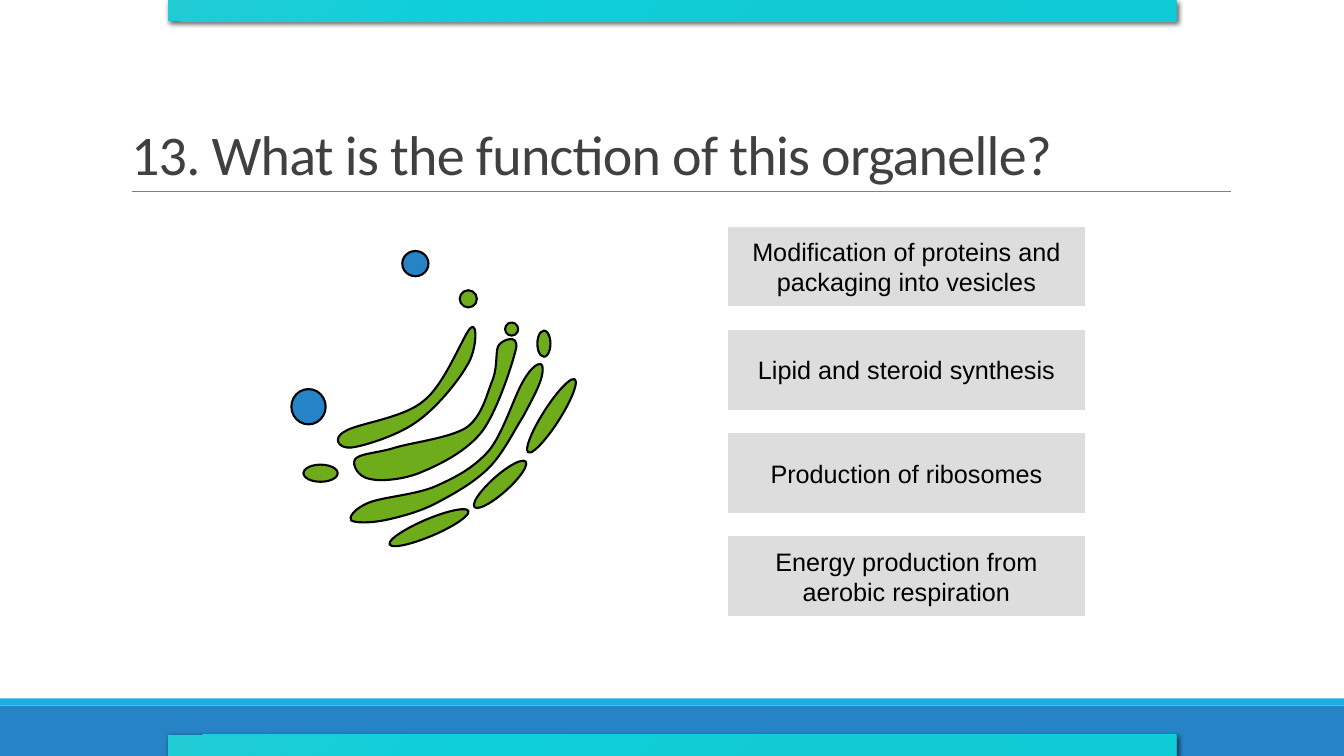
"""Build a quiz slide asking for the function of a drawn organelle."""
from lxml import etree
from pptx import Presentation
from pptx.dml.color import RGBColor
from pptx.enum.shapes import MSO_CONNECTOR, MSO_SHAPE
from pptx.enum.text import MSO_ANCHOR, MSO_AUTO_SIZE, PP_ALIGN
from pptx.oxml import parse_xml
from pptx.oxml.ns import nsdecls, qn
from pptx.util import Inches, Pt

TITLE = "13. What is the function of this organelle?"
ANSWERS = [
    "Modification of proteins and packaging into vesicles",
    "Lipid and steroid synthesis",
    "Production of ribosomes",
    "Energy production from aerobic respiration",
]

BLUE = RGBColor(0x26, 0x83, 0xC6)
SKY = RGBColor(0x1C, 0xAD, 0xE4)
GREEN = RGBColor(0x6E, 0xAC, 0x1C)
GREY = RGBColor(0xDD, 0xDD, 0xDD)
RULE = RGBColor(0x80, 0x80, 0x80)
DARK = RGBColor(0x40, 0x40, 0x40)
BLACK = RGBColor(0, 0, 0)
BAR_STOPS = [(0, "0ECBD5"), (34, "12CAD3"), (70, "0FD0DA"), (100, "20CBD4")]

CISTERNAE = [
    ((3.89, 4.45), [
        (3.71, 4.5, 3.56, 4.5, 3.52, 4.56), (3.49, 4.61, 3.55, 4.73, 3.66, 4.75),
        (3.77, 4.78, 4.01, 4.76, 4.19, 4.68), (4.38, 4.6, 4.64, 4.47, 4.79, 4.27),
        (4.94, 4.06, 5.09, 3.59, 5.12, 3.45), (5.14, 3.31, 4.99, 3.37, 4.95, 3.42),
        (4.91, 3.47, 4.94, 3.62, 4.89, 3.76), (4.83, 3.9, 4.79, 4.12, 4.63, 4.24),
        (4.46, 4.35, 4.07, 4.39, 3.89, 4.45)]),
    ((3.65, 4.99), [
        (3.79, 4.93, 4.13, 4.91, 4.33, 4.82), (4.53, 4.73, 4.7, 4.64, 4.85, 4.47),
        (4.99, 4.3, 5.1, 3.93, 5.19, 3.78), (5.27, 3.64, 5.33, 3.61, 5.36, 3.61),
        (5.39, 3.61, 5.39, 3.7, 5.36, 3.78), (5.33, 3.87, 5.27, 3.98, 5.19, 4.13),
        (5.1, 4.27, 4.99, 4.5, 4.85, 4.64), (4.7, 4.79, 4.5, 4.9, 4.33, 4.99),
        (4.16, 5.08, 3.96, 5.13, 3.82, 5.16), (3.68, 5.19, 3.51, 5.19, 3.48, 5.16),
        (3.46, 5.13, 3.51, 5.05, 3.65, 4.99)]),
    ((3.42, 4.28), [
        (3.54, 4.2, 4.01, 4.15, 4.21, 3.97), (4.42, 3.8, 4.6, 3.31, 4.67, 3.25),
        (4.74, 3.19, 4.73, 3.48, 4.63, 3.63), (4.54, 3.79, 4.31, 4.07, 4.11, 4.2),
        (3.92, 4.33, 3.59, 4.43, 3.48, 4.44), (3.36, 4.45, 3.29, 4.35, 3.42, 4.28)]),
]
VESICLES = [
    (4.56, 2.88, 0.17, 0.17, 0, GREEN),
    (3.01, 4.61, 0.34, 0.17, 0, GREEN),
    (2.89, 3.86, 0.34, 0.35, 0, BLUE),
    (4.62, 4.72, 0.68, 0.17, 318.3, GREEN),
    (5.04, 4.04, 0.86, 0.17, 302.5, GREEN),
    (3.83, 5.15, 0.85, 0.17, 337, GREEN),
    (5.33, 3.28, 0.13, 0.26, 0, GREEN),
    (5.01, 3.2, 0.13, 0.13, 0, GREEN),
    (3.99, 2.49, 0.26, 0.25, 0, BLUE),
]

SLIDE_W, SLIDE_H = 13.33, 7.5
BAND_H, STRIPE_H = 0.5, 0.07
BAR_W, BAR_H = 10, 0.21
ANSWER_X, ANSWER_Y, ANSWER_W, ANSWER_H = 7.22, 2.25, 3.54, 0.79
ANSWER_PITCH = (5.32 - ANSWER_Y) / (len(ANSWERS) - 1)
UNITS = 100


def paint(sp, fill, outlined=False):
    sp.shadow.inherit = False
    sp.fill.solid()
    sp.fill.fore_color.rgb = fill
    if outlined:
        sp.line.color.rgb = BLACK
        sp.line.width = Pt(1.5)
    else:
        sp.line.fill.background()


def add_box(s, kind, x, y, w, h, fill, outlined=False):
    sp = s.shapes.add_shape(kind, Inches(x), Inches(y), Inches(w), Inches(h))
    paint(sp, fill, outlined)
    return sp


def add_cisterna(s, start, curves):
    knots = [tuple(round(v * UNITS) for v in pt)
             for pt in [start] + [curve[4:] for curve in curves]]
    left, top = (min(axis) for axis in zip(*knots))
    builder = s.shapes.build_freeform(*knots[0], scale=Inches(1) / UNITS)
    builder.add_line_segments(knots[1:], close=True)
    sp = builder.convert_to_shape()
    paint(sp, GREEN, outlined=True)
    segments = list(sp.element.spPr.iter(qn("a:lnTo")))
    for segment, curve in zip(segments, curves):
        bezier = etree.Element(qn("a:cubicBezTo"))
        for x, y in zip(curve[::2], curve[1::2]):
            etree.SubElement(bezier, qn("a:pt"), x=str(round(x * UNITS) - left),
                             y=str(round(y * UNITS) - top))
        segment.getparent().replace(segment, bezier)


def add_bar(s, y):
    sp = add_box(s, MSO_SHAPE.RECTANGLE, (SLIDE_W - BAR_W) / 2, y, BAR_W, BAR_H, SKY)
    stops = "".join(f'<a:gs pos="{pos * 1000}"><a:srgbClr val="{color}"/></a:gs>'
                    for pos, color in BAR_STOPS)
    spPr = sp.element.spPr
    spPr.replace(spPr.find(qn("a:solidFill")), parse_xml(
        f'<a:gradFill {nsdecls("a")}><a:gsLst>{stops}</a:gsLst><a:path path="circle">'
        '<a:fillToRect l="100000" t="100000"/></a:path></a:gradFill>'))
    spPr.find(qn("a:effectLst")).append(parse_xml(
        f'<a:outerShdw {nsdecls("a")} blurRad="{Pt(3.5)}" dist="{Pt(2)}" dir="2700000">'
        '<a:srgbClr val="000000"><a:alpha val="60000"/></a:srgbClr></a:outerShdw>'))


def add_title(s):
    title = s.shapes.title
    title.left, title.top = Inches(1.2), Inches(0.31)
    title.width, title.height = Inches(11), Inches(1.59)
    tf = title.text_frame
    tf.text = TITLE
    tf.auto_size = MSO_AUTO_SIZE.NONE
    tf.vertical_anchor = MSO_ANCHOR.BOTTOM
    p = tf.paragraphs[0]
    p.alignment = PP_ALIGN.LEFT
    p.line_spacing = 0.85
    r = p.runs[0]
    r.font.name, r.font.size, r.font.color.rgb = "Calibri", Pt(40), DARK
    r.font._element.set("spc", "-50")


def add_answer(s, row, text):
    sp = add_box(s, MSO_SHAPE.ACTION_BUTTON_CUSTOM, ANSWER_X,
                 ANSWER_Y + row * ANSWER_PITCH, ANSWER_W, ANSWER_H, GREY)
    tf = sp.text_frame
    tf.text = text
    tf.word_wrap = True
    tf.vertical_anchor = MSO_ANCHOR.MIDDLE
    p = tf.paragraphs[0]
    p.alignment = PP_ALIGN.CENTER
    font = p.runs[0].font
    font.name, font.size, font.color.rgb = "Arial", Pt(18), BLACK


def main():
    prs = Presentation()
    prs.slide_width, prs.slide_height = Inches(SLIDE_W), Inches(SLIDE_H)
    s = prs.slides.add_slide(prs.slide_layouts[5])

    band_y = SLIDE_H - BAND_H
    add_box(s, MSO_SHAPE.RECTANGLE, 0, band_y, SLIDE_W, BAND_H, BLUE)
    add_box(s, MSO_SHAPE.RECTANGLE, 0, band_y - STRIPE_H, SLIDE_W, STRIPE_H, SKY)
    rule = s.shapes.add_connector(MSO_CONNECTOR.STRAIGHT, Inches(1.31), Inches(1.9),
                                  Inches(12.21), Inches(1.9))
    rule.line.color.rgb = RULE
    rule.line.width = Pt(0.5)
    etree.SubElement(rule.element.spPr, qn("a:effectLst"))
    add_title(s)

    for start, curves in CISTERNAE:
        add_cisterna(s, start, curves)
    for x, y, w, h, angle, color in VESICLES:
        add_box(s, MSO_SHAPE.OVAL, x, y, w, h, color, outlined=True).rotation = angle
    for row, text in enumerate(ANSWERS):
        add_answer(s, row, text)
    for y in (0, SLIDE_H - BAR_H):
        add_bar(s, y)
    prs.save("out.pptx")


if __name__ == "__main__":
    main()
